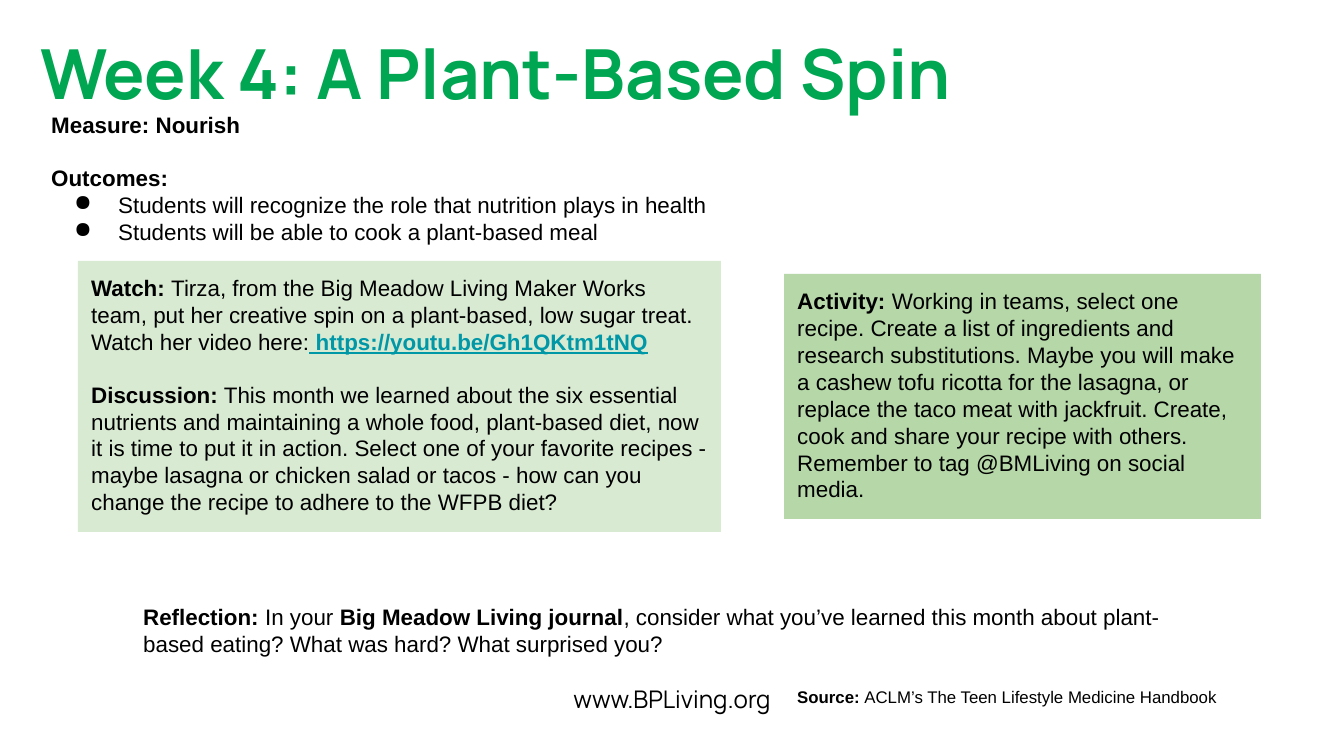
"""Build the Week 4 lesson slide."""
from dataclasses import dataclass

from lxml import etree
from pptx import Presentation
from pptx import util as u
from pptx.dml.color import RGBColor
from pptx.enum import shapes, text
from pptx.oxml.ns import qn

EMU_PER_PX = 914400 / 134.4


@dataclass(frozen=True)
class Theme:
    """Colours, fonts and type sizes of the slide."""
    ink: str = "000000"
    title: str = "00A652"
    link: str = "0097A7"
    card_light: str = "D9EAD3"
    card_mid: str = "B6D7A8"
    display: str = "Manrope"
    body: str = "Arial"
    title_pt: int = 37
    site_pt: int = 13
    body_pt: int = 12
    source_pt: int = 9
    blank_line_pt: float = 13.8


T = Theme()


def px(n):
    """Turn pixels into EMU."""
    return u.Emu(round(n * EMU_PER_PX))


def add_run(p, words, size=T.body_pt, font=T.body, color=T.ink, bold=False, underline=False):
    """Add one styled run to a paragraph."""
    r = p.add_run()
    r.text = words
    r.font.size = u.Pt(size)
    r.font.name = font
    r.font.color.rgb = RGBColor.from_string(color)
    r.font.bold = bold
    r.font.underline = underline


def add_lead(p, lead, words, size=T.body_pt):
    """Add a bold lead-in and the plain words after it."""
    add_run(p, lead, size, bold=True)
    add_run(p, words, size)


def add_bullet(p):
    """Give a paragraph a round bullet with a hanging indent."""
    pPr = p._p.get_or_add_pPr()
    pPr.set("marL", str(px(67)))
    pPr.set("indent", str(px(-44)))
    clr = etree.SubElement(pPr, qn("a:buClr"))
    etree.SubElement(clr, qn("a:srgbClr"), val=T.ink)
    etree.SubElement(pPr, qn("a:buChar"), char="●")


def add_box(s, box, fill=None):
    """Add a text box, or a filled rectangle, and return its text frame."""
    place = [px(n) for n in box]
    if fill:
        sp = s.shapes.add_shape(shapes.MSO_SHAPE.RECTANGLE, *place)
        sp.shadow.inherit = False
        sp.fill.solid()
        sp.fill.fore_color.rgb = RGBColor.from_string(fill)
        sp.line.fill.background()
    else:
        sp = s.shapes.add_textbox(*place)
    tf = sp.text_frame
    tf.word_wrap = True
    tf.vertical_anchor = text.MSO_ANCHOR.TOP
    tf.margin_left = tf.margin_right = tf.margin_top = tf.margin_bottom = u.Inches(0.1)
    tf.paragraphs[0].alignment = text.PP_ALIGN.LEFT
    return tf


def next_paragraph(tf, gap=0):
    """Add a left-aligned paragraph with a gap above it."""
    p = tf.add_paragraph()
    p.alignment = text.PP_ALIGN.LEFT
    if gap:
        p.space_before = u.Pt(gap)
    return p


def header(s, x, y, w):
    """Place the title with the measure and outcomes below it."""
    tf = add_box(s, (x, y, w, 110))
    add_run(tf.paragraphs[0], "Week 4: A Plant-Based Spin", T.title_pt, T.display, T.title, True)
    tf = add_box(s, (x + 11, y + 81, w + 16, 163))
    add_run(tf.paragraphs[0], "Measure: Nourish", bold=True)
    add_run(next_paragraph(tf, T.blank_line_pt), "Outcomes:", bold=True)
    for outcome in ("Students will recognize the role that nutrition plays in health",
                    "Students will be able to cook a plant-based meal"):
        p = next_paragraph(tf)
        add_bullet(p)
        add_run(p, outcome)


def watch_card(s, *box):
    """Place the video and discussion card."""
    tf = add_box(s, box, T.card_light)
    p = tf.paragraphs[0]
    add_lead(p, "Watch: ", "Tirza, from the Big Meadow Living Maker Works team, put her creative "
             "spin on a plant-based, low sugar treat. Watch her video here:")
    add_run(p, " ", color=T.link, underline=True)
    add_run(p, "https://youtu.be/Gh1QKtm1tNQ", color=T.link, bold=True, underline=True)
    add_lead(next_paragraph(tf, T.blank_line_pt), "Discussion:",
             " This month we learned about the six essential nutrients and maintaining a whole "
             "food, plant-based diet, now it is time to put it in action. Select one of your "
             "favorite recipes - maybe lasagna or chicken salad or tacos - how can you change "
             "the recipe to adhere to the WFPB diet?")


def activity_card(s, *box):
    """Place the team activity card."""
    tf = add_box(s, box, T.card_mid)
    add_lead(tf.paragraphs[0], "Activity: ",
             "Working in teams, select one recipe. Create a list of ingredients and research "
             "substitutions. Maybe you will make a cashew tofu ricotta for the lasagna, or "
             "replace the taco meat with jackfruit. Create, cook and share your recipe with "
             "others.")
    add_run(next_paragraph(tf), "Remember to tag @BMLiving on social media.")


def reflection(s, *box):
    """Place the closing reflection prompt."""
    p = add_box(s, box).paragraphs[0]
    add_lead(p, "Reflection:", " In your ")
    add_lead(p, "Big Meadow Living journal",
             ", consider what you’ve learned this month about plant-based eating? "
             "What was hard? What surprised you?")


def footer(s, x, y, w):
    """Place the centred web address and the source line."""
    p = add_box(s, (x, y, w, 56)).paragraphs[0]
    p.alignment = text.PP_ALIGN.CENTER
    add_run(p, "www.BPLiving.org", T.site_pt, T.display)
    p = add_box(s, (x + 784, y + 6, 534, 47)).paragraphs[0]
    add_lead(p, "Source: ", "ACLM’s The Teen Lifestyle Medicine Handbook", T.source_pt)


def main():
    """Build and save the slide."""
    prs = Presentation()
    prs.slide_width, prs.slide_height = px(1344), px(756)
    s = prs.slides.add_slide(prs.slide_layouts[6])
    footer(s, 0, 671, 1344)
    reflection(s, 130, 590, 1102, 82)
    watch_card(s, 78, 261, 643, 271)
    header(s, 27, 17, 1253)
    activity_card(s, 784, 274, 477, 245)
    prs.save("out.pptx")


if __name__ == "__main__":
    main()
